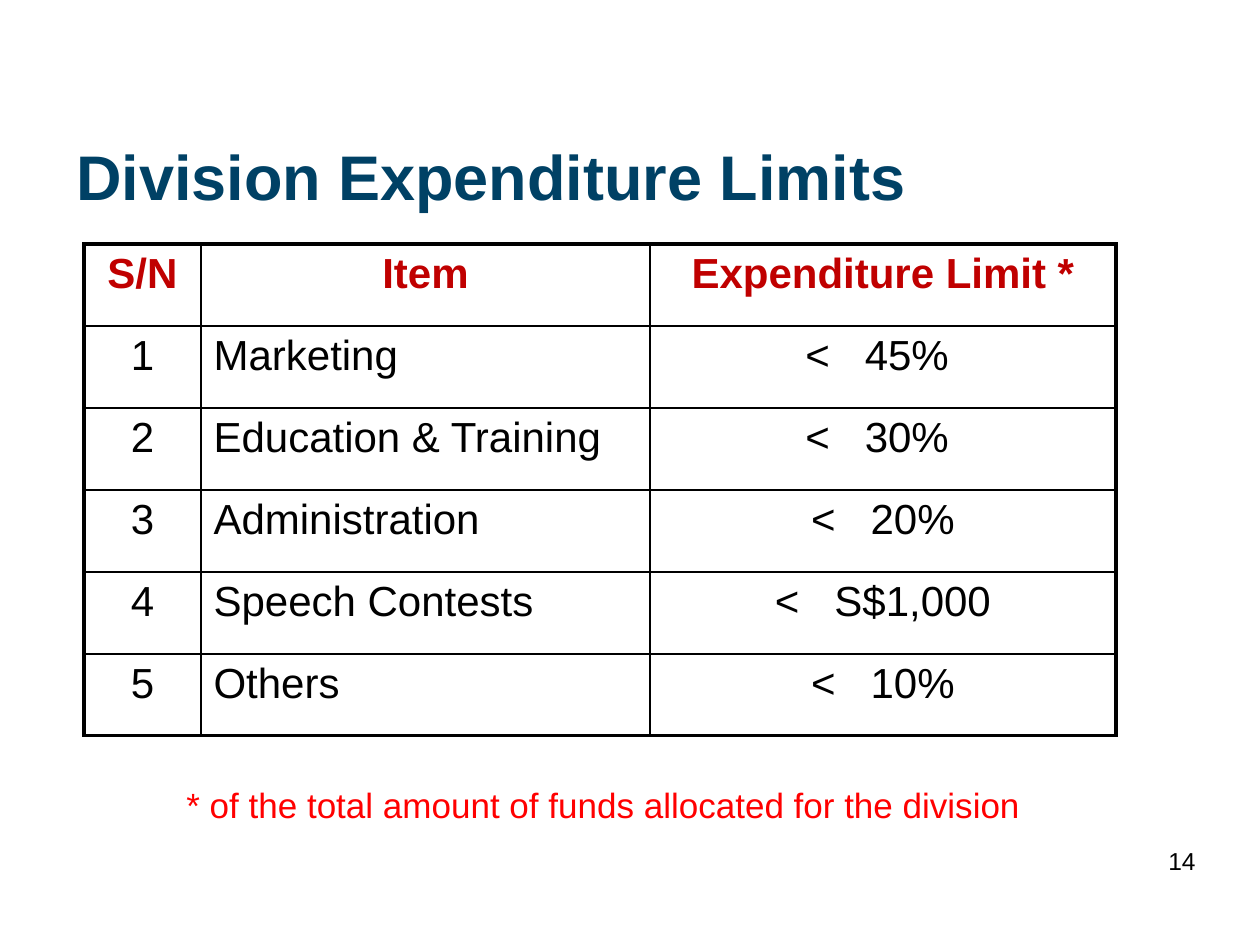
from lxml.etree import SubElement
from pptx import Presentation
from pptx.dml.color import RGBColor
from pptx.enum.text import MSO_ANCHOR as Anchor, PP_ALIGN as Align
from pptx.oxml.ns import qn
from pptx.util import Emu, Pt

PX = 914400 // 126
INK, NAVY, MAROON, RED = "000000", "004165", "C00000", "FF0000"
THIN, THICK = 1, 2.25
LIMIT_GAP = 1330
HEADINGS = ("S/N", "Item", "Expenditure Limit *")
LIMITS = (
    ("Marketing", "45% "),
    ("Education & Training", "30% "),
    ("Administration", "20%"),
    ("Speech Contests", "S$1,000"),
    ("Others", "10%"),
)


def px(*lengths):
    """Turn pixel lengths into EMU."""
    return [Emu(length * PX) for length in lengths]


def color(hex_code):
    """Turn a hex string into a colour."""
    return RGBColor.from_string(hex_code)


def add_run(paragraph, words, size, ink, bold=False):
    """Add one styled run to a paragraph."""
    run = paragraph.add_run()
    run.text = words
    run.font.name = "Arial"
    run.font.size = Pt(size)
    run.font.bold = bold
    run.font.color.rgb = color(ink)
    return run


def add_line(slide, box, words, size, ink, bold=False, align=Align.LEFT, anchor=Anchor.TOP):
    """Place one line of text in the given box."""
    frame = slide.shapes.add_textbox(*px(*box)).text_frame
    frame.word_wrap = True
    frame.vertical_anchor = anchor
    line = frame.paragraphs[0]
    line.alignment = align
    add_run(line, words, size, ink, bold)


def set_borders(cell, widths):
    """Draw the left, right, top and bottom borders of a cell."""
    properties = cell._tc.get_or_add_tcPr()
    for side, width in zip("LRTB", widths):
        border = SubElement(properties, qn(f"a:ln{side}"), w=str(Pt(width)))
        fill = SubElement(border, qn("a:solidFill"))
        SubElement(fill, qn("a:srgbClr"), val=INK)


def add_limits_table(slide, box, column_widths):
    """Place the table of expenditure limits in the given box."""
    rows = [HEADINGS] + [(str(n), *limit) for n, limit in enumerate(LIMITS, 1)]
    last_row, last_column = len(rows) - 1, len(HEADINGS) - 1
    table = slide.shapes.add_table(len(rows), len(HEADINGS), *px(*box)).table
    table.first_row = table.horz_banding = False
    for column, width in zip(table.columns, px(*column_widths)):
        column.width = width
    for r, row in enumerate(rows):
        for c, words in enumerate(row):
            cell = table.cell(r, c)
            edges = (c == 0, c == last_column, r == 0, r == last_row)
            set_borders(cell, [THICK if edge else THIN for edge in edges])
            cell.fill.background()
            line = cell.text_frame.paragraphs[0]
            line.alignment = Align.LEFT if r and c == 1 else Align.CENTER
            if r and c == last_column:
                add_run(line, "<", 24, INK)
                gap = add_run(line, " ", 24, INK)
                gap.font._element.set("spc", str(LIMIT_GAP))
            add_run(line, words, 24, INK if r else MAROON, bold=r == 0)


def add_limits_slide(deck):
    """Add the slide of division expenditure limits."""
    slide = deck.slides.add_slide(deck.slide_layouts[6])
    add_line(slide, (64, 96, 1134, 158), "Division Expenditure Limits", 36, NAVY,
             bold=True, anchor=Anchor.MIDDLE)
    add_limits_table(slide, (84, 244, 1032, 492), (117, 449, 466))
    add_line(slide, (914, 840, 294, 66), "14", 14, INK, align=Align.RIGHT)
    add_line(slide, (174, 777, 877, 55),
             "* of the total amount of funds allocated for the division", 20, RED)


def main():
    """Build and save the deck."""
    deck = Presentation()
    deck.slide_width, deck.slide_height = px(1260, 945)
    add_limits_slide(deck)
    deck.save("out.pptx")


if __name__ == "__main__":
    main()
